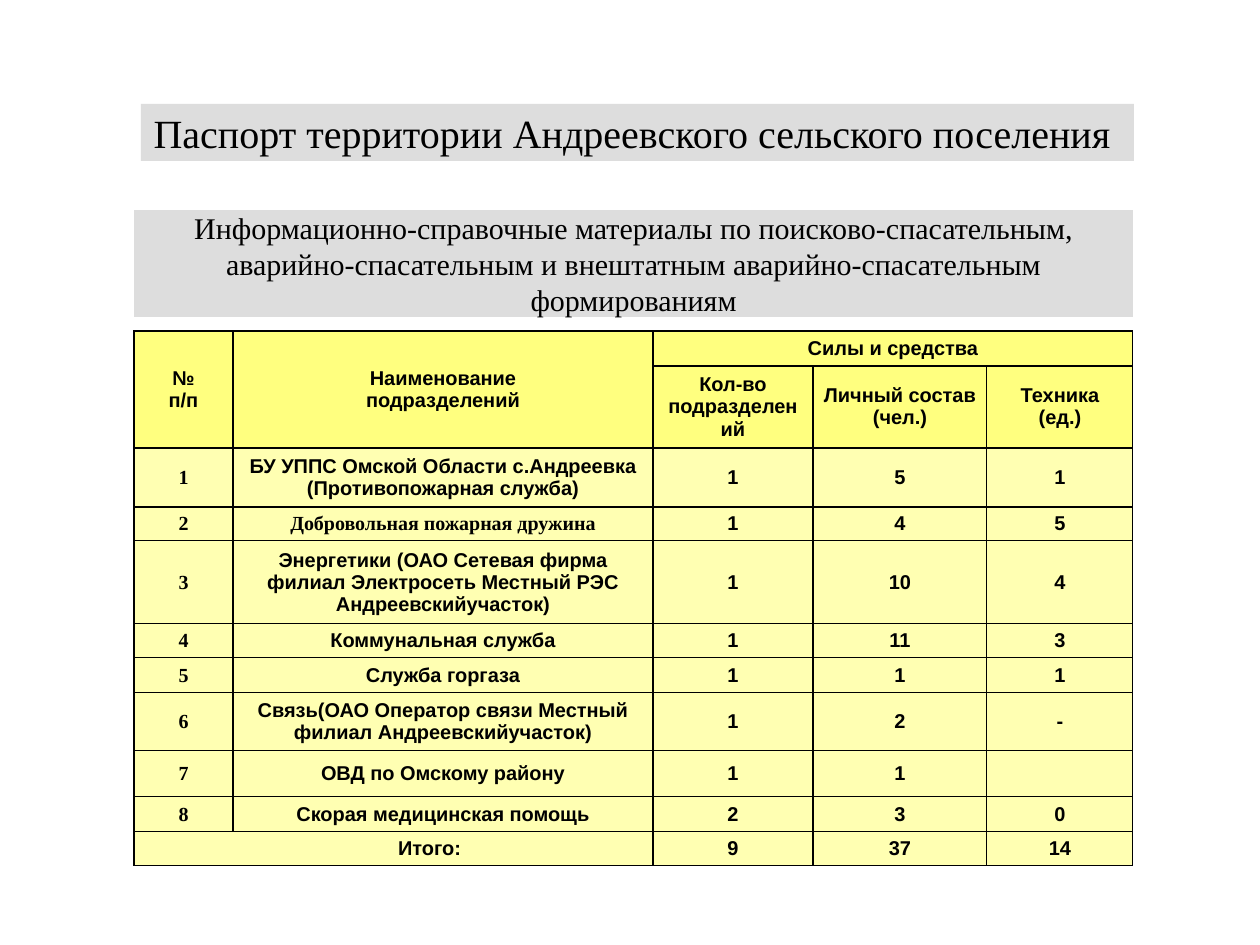
from lxml.etree import SubElement
from pptx import Presentation
from pptx.dml.color import RGBColor
from pptx.enum.shapes import MSO_SHAPE
from pptx.enum.text import MSO_ANCHOR, MSO_AUTO_SIZE, PP_ALIGN
from pptx.oxml import parse_xml
from pptx.oxml.ns import nsdecls, qn
from pptx.util import Pt

EMU_PER_PX = 10160
COLORS = {"band": "DDDDDD", "text": "000000", "header": "FFFF00",
          "body": "FFFF66", "border": "000000"}
SERIF, SANS = "Times New Roman", "Arial"

COLUMN_WIDTHS = [99, 420, 160, 174, 146]
ROW_HEIGHTS = [35, 82, 59, 34, 83, 34, 35, 58, 46, 35, 34]
HEADER_ROWS = 2
ROWS = [
    ["№\nп/п", "Наименование\nподразделений", "Силы и средства", "", ""],
    ["", "", "Кол-во подразделений", "Личный состав (чел.)", "Техника (ед.)"],
    ["1", "БУ УППС Омской Области с.Андреевка (Противопожарная служба)", "1", "5", "1"],
    ["2", "Добровольная пожарная дружина", "1", "4", "5"],
    ["3", "Энергетики (ОАО Сетевая фирма филиал Электросеть Местный РЭС Андреевскийучасток)",
     "1", "10", "4"],
    ["4", "Коммунальная служба", "1", "11", "3"],
    ["5", "Служба горгаза", "1", "1", "1"],
    ["6", "Связь(ОАО Оператор связи Местный филиал Андреевскийучасток)", "1", "2", "-"],
    ["7", "ОВД по Омскому району", "1", "1", ""],
    ["8", "Скорая медицинская помощь", "2", "3", "0"],
    ["Итого:", "", "9", "37", "14"],
]
MERGES = [((0, 0), (1, 0)), ((0, 1), (1, 1)), ((0, 2), (0, 4)), ((10, 0), (10, 1))]
VOLUNTEER_CELL = (3, 1)


def px(value):
    return value * EMU_PER_PX


def color(name):
    return RGBColor.from_string(COLORS[name])


def format_text(text_frame, font_name, size, bold=False):
    for paragraph in text_frame.paragraphs:
        paragraph.alignment = PP_ALIGN.CENTER
        font = paragraph.font
        font.name, font.size, font.bold = font_name, Pt(size), bold
        font.color.rgb = color("text")


def set_margins(target, side, vertical):
    target.margin_left = target.margin_right = px(side)
    target.margin_top = target.margin_bottom = px(vertical)


def fill_band(shape, text, size, anchor, margins):
    shape.fill.solid()
    shape.fill.fore_color.rgb = color("band")
    shape.line.fill.background()
    text_frame = shape.text_frame
    text_frame.text = text
    text_frame.word_wrap = True
    text_frame.auto_size = MSO_AUTO_SIZE.NONE
    text_frame.vertical_anchor = anchor
    set_margins(text_frame, *margins)
    format_text(text_frame, SERIF, size)


def add_heading(slide):
    shape = slide.shapes.add_shape(MSO_SHAPE.RECTANGLE, px(141), px(104), px(993), px(57))
    shape.shadow.inherit = False
    fill_band(shape, "Паспорт территории Андреевского сельского поселения ", 32,
              MSO_ANCHOR.TOP, (9, 5))


def place_title(slide):
    title = slide.shapes.title
    title.left, title.top, title.width, title.height = px(134), px(210), px(999), px(107)
    fill_band(title, "Информационно-справочные материалы по поисково-спасательным, "
              "аварийно-спасательным и внештатным аварийно-спасательным формированиям",
              24, MSO_ANCHOR.MIDDLE, (13, 6))


def set_borders(cell):
    properties = cell._tc.get_or_add_tcPr()
    for index, side in enumerate(("lnL", "lnR", "lnT", "lnB")):
        properties.insert(index, parse_xml(
            f'<a:{side} {nsdecls("a")} w="{Pt(1)}"><a:solidFill>'
            f'<a:srgbClr val="{COLORS["border"]}"/></a:solidFill></a:{side}>'))


def fill_half_transparent(cell, name):
    cell.fill.solid()
    cell.fill.fore_color.rgb = color(name)
    rgb_element = cell._tc.tcPr.find(f".//{qn('a:srgbClr')}")
    SubElement(rgb_element, qn("a:alpha"), val="50000")


def format_cell(cell, text, row, column):
    cell.vertical_anchor = MSO_ANCHOR.MIDDLE
    set_margins(cell, 11, 5)
    fill_half_transparent(cell, "header" if row < HEADER_ROWS else "body")
    set_borders(cell)
    if text:
        cell.text_frame.text = text
    is_number = column == 0 and HEADER_ROWS <= row < len(ROWS) - 1
    is_serif = is_number or (row, column) == VOLUNTEER_CELL
    format_text(cell.text_frame, SERIF if is_serif else SANS, 16, bold=True)


def add_forces_table(slide):
    table = slide.shapes.add_table(len(ROWS), len(COLUMN_WIDTHS), px(134), px(331),
                                   px(sum(COLUMN_WIDTHS)), px(sum(ROW_HEIGHTS))).table
    table.first_row = table.horz_banding = False
    for column, width in zip(table.columns, COLUMN_WIDTHS):
        column.width = px(width)
    for row, height in zip(table.rows, ROW_HEIGHTS):
        row.height = px(height)
    for row, texts in enumerate(ROWS):
        for column, text in enumerate(texts):
            format_cell(table.cell(row, column), text, row, column)
    for first, last in MERGES:
        table.cell(*first).merge(table.cell(*last))
    table.cell(len(ROWS) - 1, 0).margin_left = px(83)


def main():
    presentation = Presentation()
    presentation.slide_width, presentation.slide_height = px(1260), px(945)
    slide = presentation.slides.add_slide(presentation.slide_layouts[5])
    place_title(slide)
    add_heading(slide)
    add_forces_table(slide)
    presentation.save("out.pptx")


if __name__ == "__main__":
    main()
